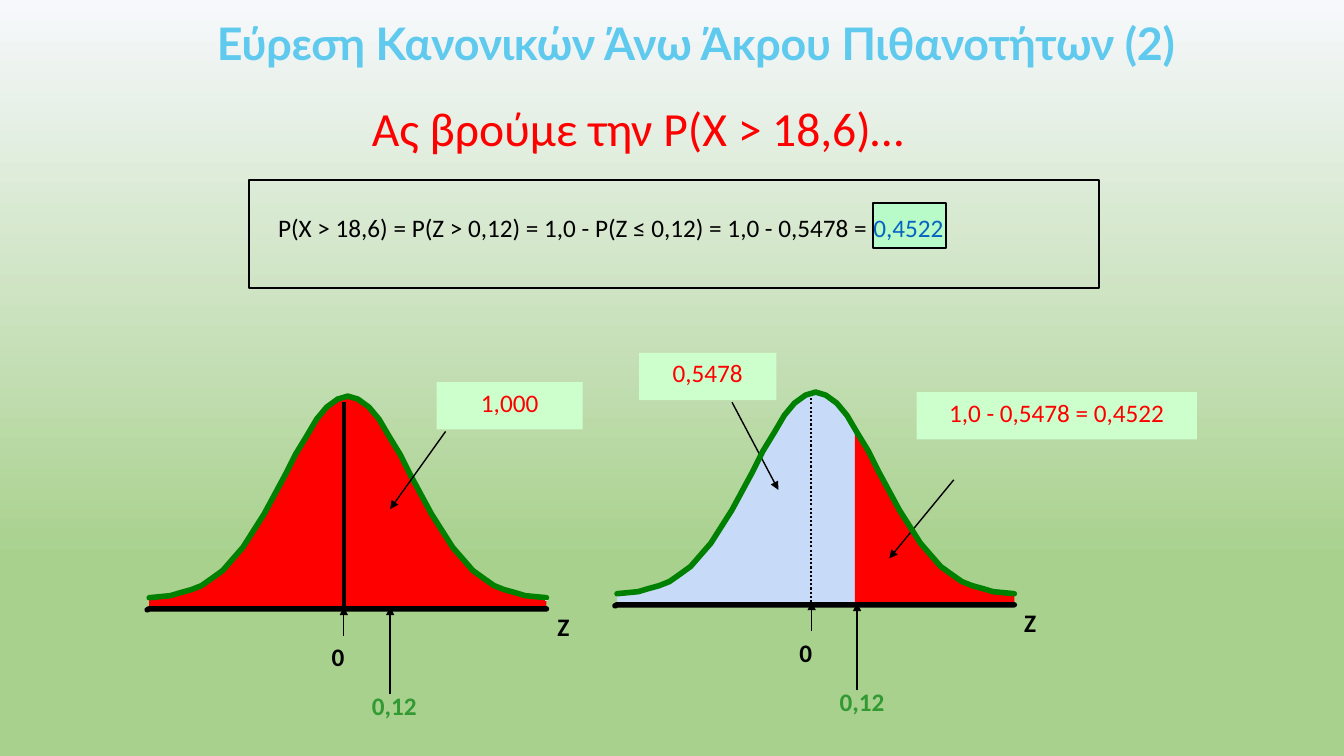
"""Build the slide on finding upper-tail normal probabilities."""
import pptx
import pptx.util
import pptx.dml.color
import pptx.enum.dml
import pptx.enum.shapes
import pptx.enum.text
import pptx.oxml.ns
import lxml.etree

SCALE = 9144
RGB = pptx.dml.color.RGBColor
ALIGN = pptx.enum.text.PP_ALIGN
RECT = pptx.enum.shapes.MSO_SHAPE.RECTANGLE
BLACK = RGB(0, 0, 0)
RED = RGB(255, 0, 0)
CURVE_GREEN = RGB(0, 128, 0)
VALUE_GREEN = RGB(0x33, 0x99, 0x33)
PALE_GREEN = RGB(0xCC, 0xFF, 0xCC)
RESULT_GREEN = RGB(0xB8, 0xFA, 0xC8)
LAVENDER = RGB(0xC7, 0xDA, 0xF7)
LINK_BLUE = RGB(0x05, 0x63, 0xC1)
TITLE_BLUE = RGB(0x5F, 0xCA, 0xEE)
MARK_GREY = RGB(0xCD, 0xCD, 0xCD)
SKY = RGB(0xF6, 0xF8, 0xFC)
MEADOW = RGB(0xA9, 0xD1, 0x8E)


def write(frame, text, color=BLACK, size=18, font="Calibri", bold=False,
          align=ALIGN.LEFT, spacing=None):
    """Add a formatted run to the first paragraph of a frame."""
    frame.word_wrap = True
    paragraph = frame.paragraphs[0]
    paragraph.alignment = align
    if spacing:
        paragraph.line_spacing = spacing
    run = paragraph.add_run()
    run.text = text
    run.font.name = font
    run.font.size = pptx.util.Pt(size)
    run.font.bold = bold
    run.font.color.rgb = color
    return run


def draw_path(points, fill=None, line=None, width=1):
    """Draw a closed filled area, or an open line when there is no fill."""
    builder = slide.shapes.build_freeform(*points[0], scale=SCALE)
    builder.add_line_segments(points[1:], close=fill is not None)
    outline = builder.convert_to_shape()
    outline.shadow.inherit = False
    if fill is None:
        outline.fill.background()
    else:
        outline.fill.solid()
        outline.fill.fore_color.rgb = fill
    if line is None:
        outline.line.fill.background()
    else:
        outline.line.color.rgb = line
        outline.line.width = pptx.util.Pt(width)
        outline.element.spPr.ln.set("cap", "rnd")


deck = pptx.Presentation()
deck.slide_width, deck.slide_height = 1333 * SCALE, 750 * SCALE
slide = deck.slides.add_slide(deck.slide_layouts[5])

backdrop = slide.background.fill
backdrop.gradient()
backdrop.gradient_angle = 270
for stop, position, color in zip(backdrop.gradient_stops, (0, 0.74), (SKY, MEADOW)):
    stop.position = position
    stop.color.rgb = color

title = slide.shapes.title
title.left, title.top, title.width, title.height = (v * SCALE for v in (215, 20, 997, 50))
heading = title.text_frame
heading.auto_size = pptx.enum.text.MSO_AUTO_SIZE.NONE
heading.vertical_anchor = pptx.enum.text.MSO_ANCHOR.MIDDLE
heading.margin_left = heading.margin_right = heading.margin_bottom = 0
heading.margin_top = SCALE
title_run = write(heading, "Εύρεση Κανονικών Άνω Άκρου Πιθανοτήτων (2)", color=TITLE_BLUE,
                  size=32, font="Lato", bold=True, align=ALIGN.JUSTIFY, spacing=0.9)
title_run.font._element.set("spc", "-20")

half_bell = [(0, 0), (10, 3), (21, 11), (31, 23), (41, 40), (52, 58), (62, 78), (83, 117),
             (104, 150), (124, 173), (135, 181), (145, 188), (155, 192), (166, 195),
             (176, 198), (197, 200)]
bell = [(-dx, dy) for dx, dy in reversed(half_bell)] + half_bell[1:]
CUT, CUT_HEIGHT, BASE = 39, 37, 211
below = [p for p in bell if p[0] < CUT] + [(CUT, CUT_HEIGHT)]
above = [(CUT, CUT_HEIGHT)] + [p for p in bell if p[0] > CUT]
bells = [((345, 393), [(bell, RED)]),
         ((809, 389), [(below, LAVENDER), (above, RED)])]

for (peak_x, peak_y), areas in bells:
    for edge, color in areas:
        area = edge + [(edge[-1][0], BASE), (edge[0][0], BASE)]
        draw_path([(peak_x + x, peak_y + y) for x, y in area], fill=color)

ARROW, PLAIN, DOTTED = "arrow", "plain", "dotted"
pointers_behind = [(946, 476, 882, 554, ARROW, 1, BLACK),
                   (726, 399, 772, 486, ARROW, 1, BLACK)]
lines_in_front = [(341, 399, 341, 602, PLAIN, 2.5, BLACK),
                  (804, 395, 804, 598, DOTTED, 1.5, BLACK),
                  (542, 595, 542, 596, PLAIN, 2, MARK_GREY),
                  (341, 631, 341, 602, ARROW, 1, BLACK),
                  (387, 689, 387, 602, ARROW, 1, BLACK),
                  (805, 626, 805, 597, ARROW, 1, BLACK),
                  (850, 685, 850, 598, ARROW, 1, BLACK),
                  (442, 428, 387, 505, ARROW, 1, BLACK)]
for layer in (pointers_behind, lines_in_front):
    for x1, y1, x2, y2, style, width, color in layer:
        line = slide.shapes.add_connector(pptx.enum.shapes.MSO_CONNECTOR.STRAIGHT,
                                          *(v * SCALE for v in (x1, y1, x2, y2)))
        line.line.color.rgb = color
        line.line.width = pptx.util.Pt(width)
        if style == DOTTED:
            line.line.dash_style = pptx.enum.dml.MSO_LINE.ROUND_DOT
        properties = line.element.spPr
        if style == ARROW:
            lxml.etree.SubElement(properties.ln, pptx.oxml.ns.qn("a:tailEnd"), type="triangle")
        lxml.etree.SubElement(properties, pptx.oxml.ns.qn("a:effectLst"))
    if layer is pointers_behind:
        for (peak_x, peak_y), areas in bells:
            draw_path([(peak_x + x, peak_y + y) for x, y in bell], line=CURVE_GREEN, width=4)

for (peak_x, peak_y), areas in bells:
    axis = [(-199, BASE + 1), (-197, BASE), (197, BASE)]
    draw_path([(peak_x + x, peak_y + y) for x, y in axis], line=BLACK, width=4)

boxes = [(634, 350, 136, 47, PALE_GREEN, None, "0,5478"),
         (433, 379, 145, 47, PALE_GREEN, None, "1,000"),
         (909, 389, 278, 47, PALE_GREEN, None, "1,0 - 0,5478 = 0,4522"),
         (866, 201, 72, 45, RESULT_GREEN, BLACK, ""),
         (247, 179, 843, 107, None, BLACK, "")]
for left, top, width, height, fill, border, text in boxes:
    box = slide.shapes.add_shape(RECT, *(v * SCALE for v in (left, top, width, height)))
    box.shadow.inherit = False
    if fill is None:
        box.fill.background()
    else:
        box.fill.solid()
        box.fill.fore_color.rgb = fill
    if border is None:
        box.line.fill.background()
    else:
        box.line.color.rgb = border
        box.line.width = pptx.util.Pt(1.5)
    if text:
        box.text_frame.vertical_anchor = pptx.enum.text.MSO_ANCHOR.TOP
        write(box.text_frame, text, color=RED, align=ALIGN.CENTER)

AXIS_LABEL = {"bold": True}
VALUE_LABEL = {"bold": True, "color": VALUE_GREEN}
labels = [(359, 100, 615, 75, [("Ας βρούμε την P(X > 18,6)…",
                                {"color": RED, "size": 34, "align": ALIGN.JUSTIFY, "spacing": 0.9})]),
          (266, 206, 793, 65, [("P(X > 18,6) = P(Z > 0,12) = 1,0 - P(Z ≤ 0,12) = 1,0 - 0,5478 = ", {}),
                               ("0,4522", {"color": LINK_BLUE})]),
          (543, 602, 46, 46, [("Z", AXIS_LABEL)]),
          (1006, 598, 46, 46, [("Z", AXIS_LABEL)]),
          (319, 631, 42, 47, [("0", AXIS_LABEL)]),
          (783, 627, 42, 47, [("0", AXIS_LABEL)]),
          (359, 680, 71, 47, [("0,12", VALUE_LABEL)]),
          (823, 676, 71, 47, [("0,12", VALUE_LABEL)])]
for left, top, width, height, runs in labels:
    label = slide.shapes.add_textbox(*(v * SCALE for v in (left, top, width, height)))
    for text, style in runs:
        write(label.text_frame, text, **style)

deck.save("out.pptx")
